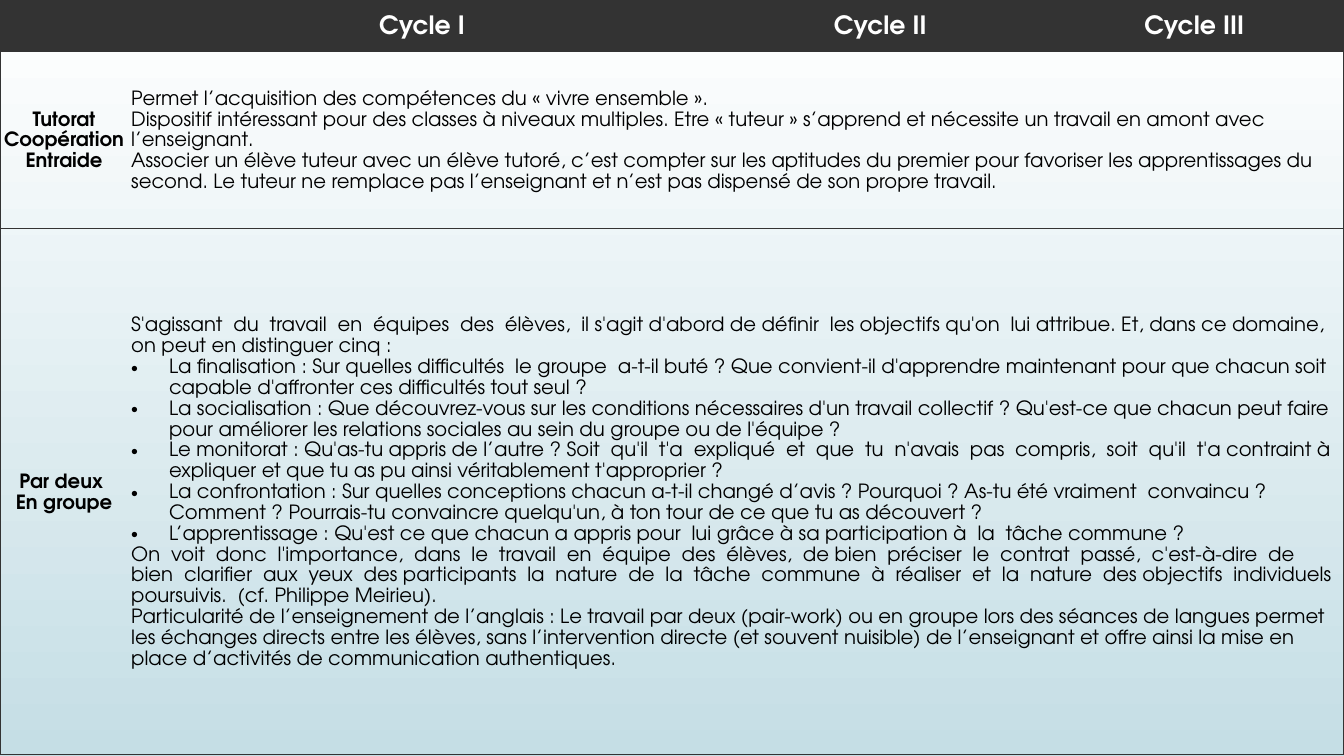
from dataclasses import dataclass

import lxml.etree
import pptx
import pptx.dml.color
import pptx.enum.text
import pptx.oxml
import pptx.oxml.ns
import pptx.table
import pptx.util

PX = 9525
WIDE, HIGH = 1280, 720
FONT = "TeX Gyre Adventor"
DARK = pptx.dml.color.RGBColor(0x33, 0x33, 0x33)
BLACK = pptx.dml.color.RGBColor(0, 0, 0)
WHITE = pptx.dml.color.RGBColor(255, 255, 255)
MIST = pptx.dml.color.RGBColor(0xC5, 0xDE, 0xE5)
LEFT = pptx.enum.text.PP_ALIGN.LEFT
CENTER = pptx.enum.text.PP_ALIGN.CENTER
PLAIN_STYLE = "{2D5ABB26-0587-4C30-8999-92F81FD0307C}"
COLS = (122, 560, 313, 285)
ROWS = (49, 169, 501)
PAD = 3
INDENT = 36
HEADS = ("Cycle I", "Cycle II", "Cycle III")


@dataclass(frozen=True)
class Line:
    text: str
    bullet: bool = False


@dataclass(frozen=True)
class Topic:
    label: tuple[Line, ...]
    body: tuple[Line, ...]


TOPICS = (
    Topic(
        (Line("Tutorat"), Line("Coopération"), Line("Entraide")),
        (
            Line("Permet l’acquisition des compétences du « vivre ensemble »."),
            Line("Dispositif intéressant pour des classes à niveaux multiples. "
                 "Etre « tuteur » s’apprend et nécessite un travail en amont "
                 "avec l’enseignant."),
            Line("Associer un élève tuteur avec un élève tutoré, c’est compter "
                 "sur les aptitudes du premier pour favoriser les apprentissages "
                 "du second. Le tuteur ne remplace pas l’enseignant et n’est pas "
                 "dispensé de son propre travail."),
        ),
    ),
    Topic(
        (Line("Par deux "), Line("En groupe")),
        (
            Line("S'agissant  du  travail  en  équipes  des  élèves,  il s'agit "
                 "d'abord de définir  les objectifs qu'on  lui attribue. Et, dans "
                 "ce domaine, on peut en distinguer cinq :"),
            Line("La finalisation : Sur quelles difficultés  le groupe  a-t-il "
                 "buté ? Que convient-il d'apprendre maintenant pour que chacun "
                 "soit capable d'affronter ces difficultés tout seul ?", True),
            Line("La socialisation : Que découvrez-vous sur les conditions "
                 "nécessaires d'un travail collectif ? Qu'est-ce que chacun peut "
                 "faire pour améliorer les relations sociales au sein du groupe "
                 "ou de l'équipe ?", True),
            Line("Le monitorat : Qu'as-tu appris de l’autre ? Soit  qu'il  t'a  "
                 "expliqué  et  que  tu  n'avais  pas  compris,  soit  qu'il  "
                 "t'a contraint à expliquer et que tu as pu ainsi véritablement "
                 "t'approprier ?", True),
            Line("La confrontation : Sur quelles conceptions chacun a-t-il changé "
                 "d’avis ? Pourquoi ? As-tu été vraiment  convaincu ? Comment ? "
                 "Pourrais-tu convaincre quelqu'un, à ton tour de ce que tu as "
                 "découvert ?", True),
            Line("L’apprentissage : Qu'est ce que chacun a appris pour  lui grâce "
                 "à sa participation à  la  tâche commune ?", True),
            Line("On  voit  donc  l'importance,  dans  le  travail  en  équipe  "
                 "des  élèves,  de bien  préciser  le  contrat  passé,  "
                 "c'est-à-dire  de  bien  clarifier  aux  yeux  des participants  "
                 "la  nature  de  la  tâche  commune  à  réaliser  et  la  nature  "
                 "des objectifs  individuels  poursuivis.  (cf. Philippe Meirieu)."),
            Line("Particularité de l’enseignement de l’anglais : Le travail par "
                 "deux (pair-work) ou en groupe lors des séances de langues permet "
                 "les échanges directs entre les élèves, sans l’intervention "
                 "directe (et souvent nuisible) de l’enseignant et offre ainsi la "
                 "mise en place d’activités de communication authentiques."),
        ),
    ),
)


def add_bullet(para) -> None:
    props = para._p.get_or_add_pPr()
    props.set("marL", str(INDENT * PX))
    props.set("indent", str(-INDENT * PX))
    for tag, key, value in (("a:buFont", "typeface", "Arial"),
                            ("a:buChar", "char", "•")):
        lxml.etree.SubElement(props, pptx.oxml.ns.qn(tag)).set(key, value)


def write(cell: pptx.table._Cell, lines: tuple[Line, ...], *, size: int = 14,
          color: pptx.dml.color.RGBColor = BLACK, bold: bool = True,
          align: pptx.enum.text.PP_ALIGN = CENTER) -> None:
    frame = cell.text_frame
    for i, line in enumerate(lines):
        para = frame.add_paragraph() if i else frame.paragraphs[0]
        if line.bullet:
            add_bullet(para)
        para.alignment = align
        para.line_spacing = 1.15
        run = para.add_run()
        run.text = line.text
        font = run.font
        font.name, font.size, font.bold = FONT, pptx.util.Pt(size), bold
        font.color.rgb = color


def add_edge(cell: pptx.table._Cell, side: str) -> None:
    props = cell._tc.get_or_add_tcPr()
    props.append(pptx.oxml.parse_xml(
        f'<a:ln{side} {pptx.oxml.ns.nsdecls("a")} w="9525"><a:solidFill>'
        f'<a:srgbClr val="{DARK}"/></a:solidFill></a:ln{side}>'))


def dress(cell: pptx.table._Cell, row: int, col: int) -> None:
    """Set padding, outer edges, row rules and fill of one cell."""
    cell.margin_left = cell.margin_right = PAD * PX
    cell.margin_top = cell.margin_bottom = 0
    cell.vertical_anchor = pptx.enum.text.MSO_ANCHOR.MIDDLE
    if col == 0:
        add_edge(cell, "L")
    if col + cell.span_width == len(COLS):
        add_edge(cell, "R")
    add_edge(cell, "T")
    add_edge(cell, "B")
    if row == 0:
        cell.fill.solid()
        cell.fill.fore_color.rgb = DARK
    else:
        cell.fill.background()


def add_grid(slide) -> pptx.table.Table:
    frame = slide.shapes.add_table(len(ROWS), len(COLS), 0, 0,
                                   sum(COLS) * PX, sum(ROWS) * PX)
    grid = frame.table
    grid.horz_banding = False
    grid._tbl.tblPr.find(pptx.oxml.ns.qn("a:tableStyleId")).text = PLAIN_STYLE
    for col, width in zip(grid.columns, COLS):
        col.width = width * PX
    for row, height in zip(grid.rows, ROWS):
        row.height = height * PX
    for row in range(1, len(ROWS)):
        grid.cell(row, 1).merge(grid.cell(row, len(COLS) - 1))
    for row in range(len(ROWS)):
        for col in range(len(COLS)):
            dress(grid.cell(row, col), row, col)
    return grid


def paint(slide) -> None:
    fill = slide.background.fill
    fill.gradient()
    fill.gradient_angle = 270
    for stop, color, place in zip(fill.gradient_stops, (WHITE, MIST), (0, 1)):
        stop.color.rgb = color
        stop.position = place


def main() -> None:
    deck = pptx.Presentation()
    deck.slide_width, deck.slide_height = WIDE * PX, HIGH * PX
    slide = deck.slides.add_slide(deck.slide_layouts[6])
    paint(slide)
    grid = add_grid(slide)
    for col, head in enumerate(HEADS, 1):
        write(grid.cell(0, col), (Line(head),), size=18, color=WHITE)
    for row, topic in enumerate(TOPICS, 1):
        write(grid.cell(row, 0), topic.label)
        write(grid.cell(row, 1), topic.body, bold=False, align=LEFT)
    deck.save("out.pptx")


if __name__ == "__main__":
    main()
